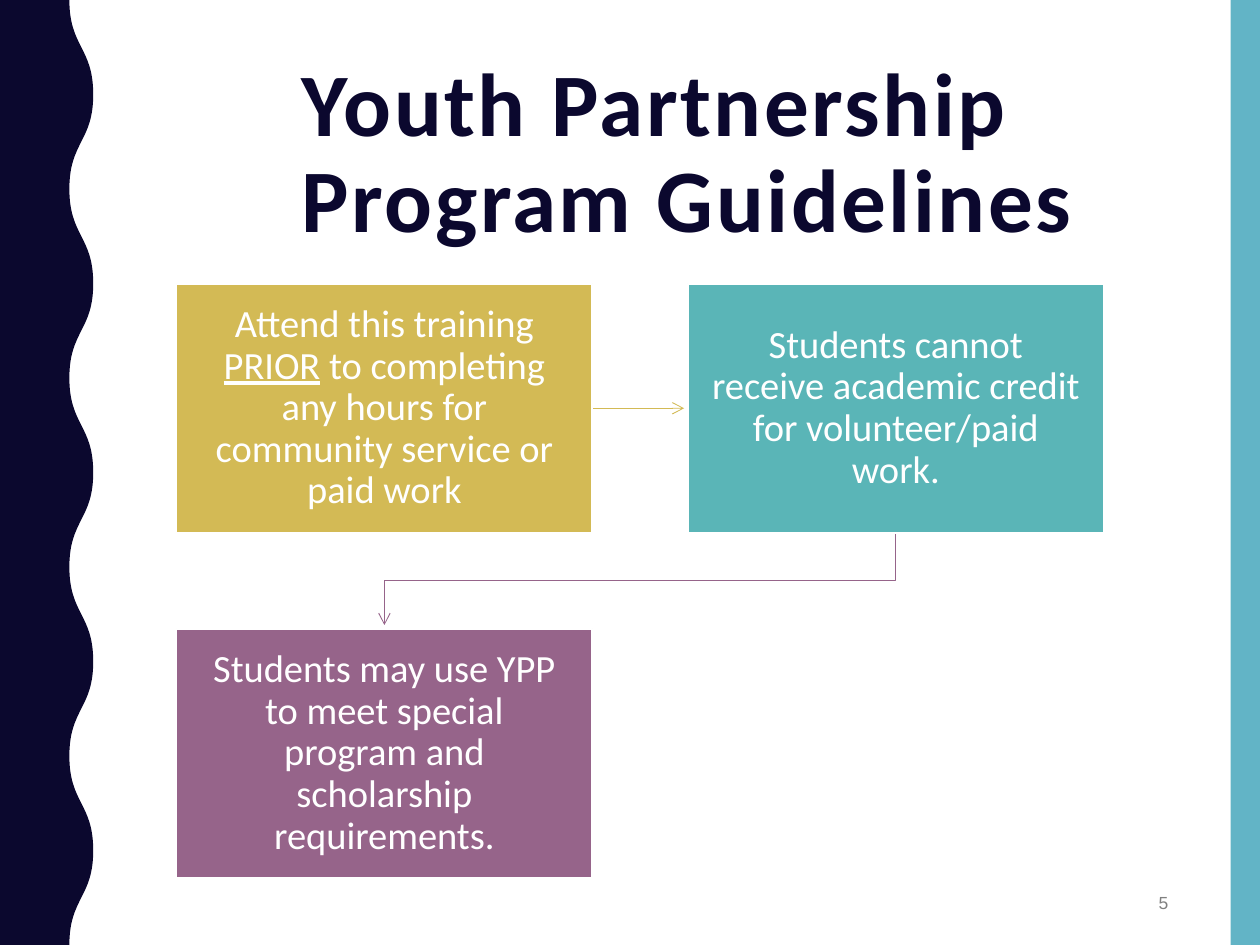
from pptx import Presentation
from pptx.dml.color import RGBColor
from pptx.enum.shapes import MSO_CONNECTOR as Link, MSO_SHAPE as Preset
from pptx.enum.text import MSO_ANCHOR as Anchor, PP_ALIGN as Align
from pptx.oxml.ns import qn
from pptx.util import Cm, Pt
from lxml.etree import SubElement

COLORS = {
    "navy": "0B082E", "sky": "62B4C6", "gold": "D3BA55", "teal": "5AB5B7",
    "plum": "96648A", "white": "FFFFFF", "gray": "808080",
}
PAGE_WIDTH, PAGE_HEIGHT = 25.4, 19.05


def color(name):
    return RGBColor.from_string(COLORS[name])


def paint(shape, fill, line=None, width=1):
    shape.shadow.inherit = False
    shape.fill.solid()
    shape.fill.fore_color.rgb = color(fill)
    if line:
        shape.line.color.rgb = color(line)
        shape.line.width = Pt(width)
    else:
        shape.line.fill.background()


def write(shape, *parts, size, tint, font="Calibri", bold=False, align=Align.CENTER,
          leading=None, spacing=None, hanging=None, insets=(0.25, 0.13)):
    """Fill one paragraph; a part given as (text, True) is underlined."""
    frame = shape.text_frame
    frame.word_wrap = True
    frame.vertical_anchor = Anchor.MIDDLE
    frame.margin_left = frame.margin_right = Cm(insets[0])
    frame.margin_top = frame.margin_bottom = Cm(insets[1])
    para = frame.paragraphs[0]
    para.alignment = align
    if leading:
        para.line_spacing = leading
    if hanging:
        properties = para._p.get_or_add_pPr()
        properties.set("marL", str(Cm(hanging)))
        properties.set("indent", str(-Cm(hanging)))
    for part in parts:
        text, underline = part if isinstance(part, tuple) else (part, False)
        span = para.add_run()
        span.text = text
        span.font.name = font
        span.font.size = Pt(size)
        span.font.bold = bold
        span.font.underline = underline
        span.font.color.rgb = color(tint)
        if spacing:
            span._r.get_or_add_rPr().set("spc", str(int(spacing * 100)))


def add_text(page, left, top, width, height, *parts, **style):
    box = page.shapes.add_textbox(Cm(left), Cm(top), Cm(width), Cm(height))
    write(box, *parts, **style)


def add_path(page, points, close):
    (x, y), *rest = [(Cm(x), Cm(y)) for x, y in points]
    builder = page.shapes.build_freeform(x, y)
    builder.add_line_segments(rest, close=close)
    return builder.convert_to_shape()


def bend_segments(shape, curves):
    """Turn the first 3 * curves line segments into cubic curves."""
    lines = list(shape._element.iter(qn("a:lnTo")))[:3 * curves]
    for first, second, third in zip(lines[::3], lines[1::3], lines[2::3]):
        first.tag = qn("a:cubicBezTo")
        for line in (second, third):
            first.append(line[0])
            line.getparent().remove(line)


def style_arrow(arrow, tint):
    arrow.line.color.rgb = color(tint)
    arrow.line.width = Pt(0.5)
    SubElement(arrow.line._get_or_add_ln(), qn("a:tailEnd"), type="arrow")


def add_wave_band(page, left, top, width, height, depth=0.48, halves=10):
    """Band whose right edge swings between width - depth and its full width."""
    half = height / halves
    inner, outer = left + width - depth, left + width
    points = [(inner, top)]
    for index in range(halves):
        start, end = (outer, inner) if index % 2 else (inner, outer)
        y = top + index * half
        points += [(start, y + half / 2), (end, y + half / 2), (end, y + half)]
    points += [(left, top + height), (left, top)]
    band = add_path(page, points, close=True)
    bend_segments(band, halves)
    paint(band, "navy")


def add_side_bar(page, left, top, width, height):
    bar = page.shapes.add_shape(Preset.RECTANGLE, Cm(left), Cm(top), Cm(width), Cm(height))
    paint(bar, "sky")


def add_card(page, left, top, width, height, fill, *parts):
    card = page.shapes.add_shape(Preset.RECTANGLE, Cm(left), Cm(top), Cm(width), Cm(height))
    paint(card, fill, line="white")
    write(card, *parts, size=22, tint="white", leading=0.9, insets=(0.41, 0.43))


def add_flow(page, left, top, width, height):
    """Three cards on a two by two grid, joined by arrows."""
    card_width, card_height = 8.38, 5.02
    right = left + width - card_width
    lower = top + height - card_height
    gap = 0.08  # between an arrowhead and its card

    # Arrow from the first card to the second
    middle = Cm(top + card_height / 2)
    arrow = page.shapes.add_connector(
        Link.STRAIGHT, Cm(left + card_width), middle, Cm(right - gap), middle)
    SubElement(arrow._element.spPr, qn("a:effectLst"))
    style_arrow(arrow, "gold")

    # Bent arrow from the second card down to the third
    start_x, end_x = right + card_width / 2, left + card_width / 2
    bottom = top + card_height
    bend = (bottom + lower) / 2
    elbow = add_path(page, [(start_x, bottom), (start_x, bend), (end_x, bend),
                            (end_x, lower - gap)], close=False)
    elbow.shadow.inherit = False
    elbow.fill.background()
    style_arrow(elbow, "plum")

    # Cards
    cards = [
        (left, top, "gold", ["Attend this training ", ("PRIOR", True),
         " to completing any hours for community service or paid work"]),
        (right, top, "teal",
         ["Students cannot receive academic credit for volunteer/paid work."]),
        (left, lower, "plum",
         ["Students may use YPP to meet special program and scholarship requirements."]),
    ]
    for x, y, fill, parts in cards:
        add_card(page, x, y, card_width, card_height, fill, *parts)


def main():
    deck = Presentation()
    deck.slide_width, deck.slide_height = Cm(PAGE_WIDTH), Cm(PAGE_HEIGHT)
    page = deck.slides.add_slide(deck.slide_layouts[6])

    # Side decoration
    add_side_bar(page, 24.81, 0, PAGE_WIDTH - 24.81, PAGE_HEIGHT)
    add_wave_band(page, 0, 0, 1.88, PAGE_HEIGHT)

    # Title, flow and page number
    add_text(page, 2.62, 1.04, 21.2, 4.19, "Youth Partnership Program Guidelines",
             size=51, tint="navy", bold=True, leading=0.9, spacing=1.5, hanging=1.27)
    add_flow(page, 3.56, 5.72, 18.69, 11.98)
    add_text(page, 17.93, 17.7, 5.87, 0.97, "5",
             size=10, tint="gray", font="Arial", align=Align.RIGHT)

    deck.save("out.pptx")


if __name__ == "__main__":
    main()
